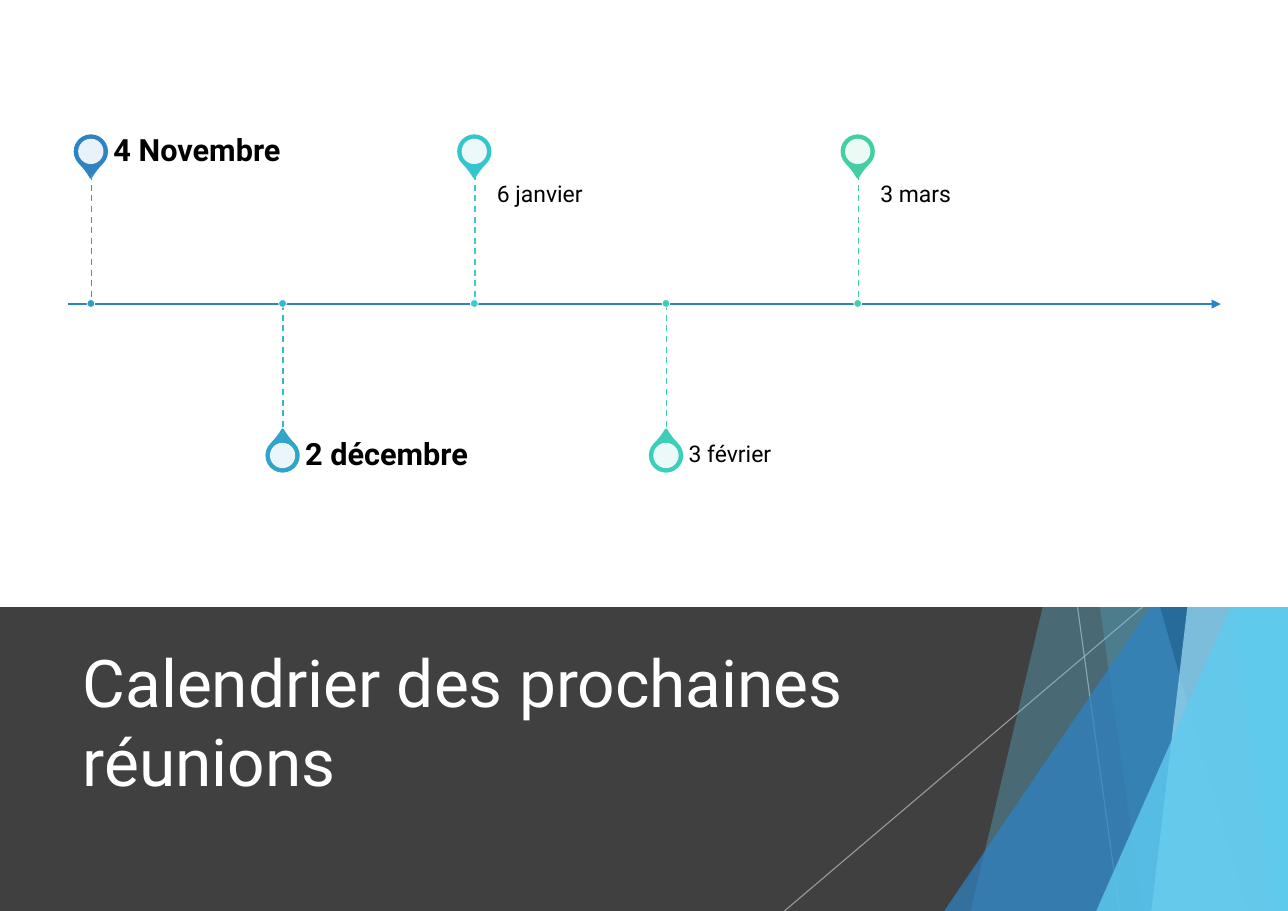
from lxml.etree import SubElement
from pptx import Presentation
from pptx.dml.color import RGBColor
from pptx.enum.dml import MSO_LINE
from pptx.enum.shapes import MSO_CONNECTOR, MSO_SHAPE
from pptx.enum.text import MSO_ANCHOR, PP_ALIGN
from pptx.oxml.ns import qn
from pptx.util import Pt

PX = 9144
WIDTH, HEIGHT, PANEL_TOP = 1169, 827, 551
FONT = "Roboto"
RECTANGLE = MSO_SHAPE.RECTANGLE
TRIANGLE = MSO_SHAPE.ISOSCELES_TRIANGLE
TEARDROP = MSO_SHAPE.TEAR
OVAL = MSO_SHAPE.OVAL
STRAIGHT = MSO_CONNECTOR.STRAIGHT
DASH = MSO_LINE.DASH
LEFT = PP_ALIGN.LEFT
TOP, MIDDLE = MSO_ANCHOR.TOP, MSO_ANCHOR.MIDDLE

TITLE = "Calendrier des prochaines réunions"
MEETINGS = [
    ("4 Novembre", True, "2E83C3", "309DC8"),
    ("2 décembre", True, "30A4C9", "31B9CD"),
    ("6 janvier", False, "34C6CE", "37CECB"),
    ("3 février", False, "3BCFBB", "3CCFB6"),
    ("3 mars", False, "42D0A2", "42D0A2"),
]
RAYS = [((978, PANEL_TOP), (1016, HEIGHT)), ((1037, PANEL_TOP), (712, HEIGHT))]
FACETS = [
    ("band", (1077, 1169, 1169, 881), "5FCBEF", 30),
    ("band", (921, 1169, 1169, 1037), "5FCBEF", 20),
    ("triangle", (857, 367), "2E83C3", 72),
    ("band", (895, 1169, 1169, 1132), "226292", 70),
    ("band", (1143, 1169, 1169, 1045), "9FE0F5", 70),
    ("band", (1049, 1169, 1169, 1155), "5FCBEF", 65),
    ("triangle", (995, 433), "5FCBEF", 80),
]
AXIS_Y, AXIS_START, AXIS_END = 276, 62, 1108
FIRST_X, STEP = 83, 174
PIN_SIZE, BULB_SIZE, DOT_SIZE = 29, 23, 7


def color(value):
    return RGBColor.from_string(value)


def set_opacity(element, percent):
    for tint in element.iter(qn("a:srgbClr")):
        SubElement(tint, qn("a:alpha"), val=str(percent * 1000))


def paint(shape, fill, opacity=100, line=None, weight=0):
    shape.shadow.inherit = False
    shape.fill.solid()
    shape.fill.fore_color.rgb = color(fill)
    if opacity < 100:
        set_opacity(shape.element.spPr, opacity)
    if line:
        shape.line.color.rgb = color(line)
        shape.line.width = Pt(weight)
    else:
        shape.line.fill.background()


def add_preset(page, kind, left, top, width, height):
    return page.shapes.add_shape(kind, left * PX, top * PX, width * PX, height * PX)


def add_line(page, start, end, stroke, weight):
    line = page.shapes.add_connector(
        STRAIGHT, start[0] * PX, start[1] * PX, end[0] * PX, end[1] * PX)
    line.line.color.rgb = color(stroke)
    line.line.width = Pt(weight)
    SubElement(line.element.spPr, qn("a:effectLst"))
    return line


def write(frame, text, size, ink, anchor, bold=False):
    frame.word_wrap = True
    frame.vertical_anchor = anchor
    para = frame.paragraphs[0]
    para.text = text
    para.alignment = LEFT
    para.font.name = FONT
    para.font.size = Pt(size)
    para.font.bold = bold
    para.font.color.rgb = color(ink)
    return para


def add_panel(page):
    paint(add_preset(page, RECTANGLE, 0, PANEL_TOP, WIDTH, HEIGHT - PANEL_TOP), "404040")
    for start, end in RAYS:
        ray = add_line(page, start, end, "BFBFBF", 0.75)
        set_opacity(ray.element.spPr, 70)
    for kind, place, fill, opacity in FACETS:
        if kind == "triangle":
            left, top = place
            facet = add_preset(page, TRIANGLE, left, top, WIDTH - left, HEIGHT - top)
            facet.adjustments[0] = 1
        else:
            corners = list(zip(place, (0, 0, HEIGHT, HEIGHT)))
            builder = page.shapes.build_freeform(*corners[0], scale=PX)
            builder.add_line_segments(corners[1:], close=True)
            facet = builder.convert_to_shape()
        paint(facet, fill, opacity)


def add_title(page):
    title = page.shapes.title
    title.element.getparent().append(title.element)
    title.left, title.top, title.width, title.height = (
        side * PX for side in (65, 575, 824, 159))
    write(title.text_frame, TITLE, 43, "FFFFFF", MIDDLE)


def add_label(page, text, bold, x, above):
    beside_stem = above and not bold
    if beside_stem:
        top, height = 158, 117
    else:
        top, height = 117 if above else 393, 41
    box = page.shapes.add_textbox((x + 20) * PX, top * PX, 290 * PX, height * PX)
    frame = box.text_frame
    frame.margin_left = 0
    frame.margin_right = (14 if bold else 10) * PX
    frame.margin_top = 10 * PX if beside_stem else 0
    frame.margin_bottom = 16 * PX if beside_stem else 0
    para = write(frame, text, 20 if bold else 15, "000000",
                 TOP if beside_stem else MIDDLE, bold)
    para.line_spacing = 0.9


def add_meeting(page, index, text, bold, pin_color, stem_color):
    x = FIRST_X + index * STEP
    above = index % 2 == 0
    pin_top, stem_end = (123, 158) if above else (399, 393)
    pin = add_preset(page, TEARDROP, x - 15, pin_top, PIN_SIZE, PIN_SIZE)
    pin.adjustments[0] = 1.15
    pin.rotation = 135 if above else 315
    paint(pin, pin_color, line=pin_color, weight=1.5)
    bulb = add_preset(page, OVAL, x - 12, pin_top + 3, BULB_SIZE, BULB_SIZE)
    paint(bulb, "FFFFFF", 90)
    add_label(page, text, bold, x, above)
    ends = sorted([(x, stem_end), (x, AXIS_Y)])
    add_line(page, *ends, stem_color, 1).line.dash_style = DASH
    dot = add_preset(page, OVAL, x - 4, AXIS_Y - 4, DOT_SIZE, DOT_SIZE)
    paint(dot, stem_color, line="FFFFFF", weight=0.5)


def add_timeline(page):
    paint(add_preset(page, RECTANGLE, 0, 0, WIDTH, PANEL_TOP), "FFFFFF")
    axis = add_line(page, (AXIS_START, AXIS_Y), (AXIS_END, AXIS_Y), "2E83C3", 1.5)
    SubElement(axis.element.spPr.find(qn("a:ln")), qn("a:tailEnd"), type="triangle")
    for index, meeting in enumerate(MEETINGS):
        add_meeting(page, index, *meeting)


def main():
    deck = Presentation()
    deck.slide_width, deck.slide_height = WIDTH * PX, HEIGHT * PX
    page = deck.slides.add_slide(deck.slide_layouts[5])
    add_panel(page)
    add_title(page)
    add_timeline(page)
    deck.save("out.pptx")


if __name__ == "__main__":
    main()
